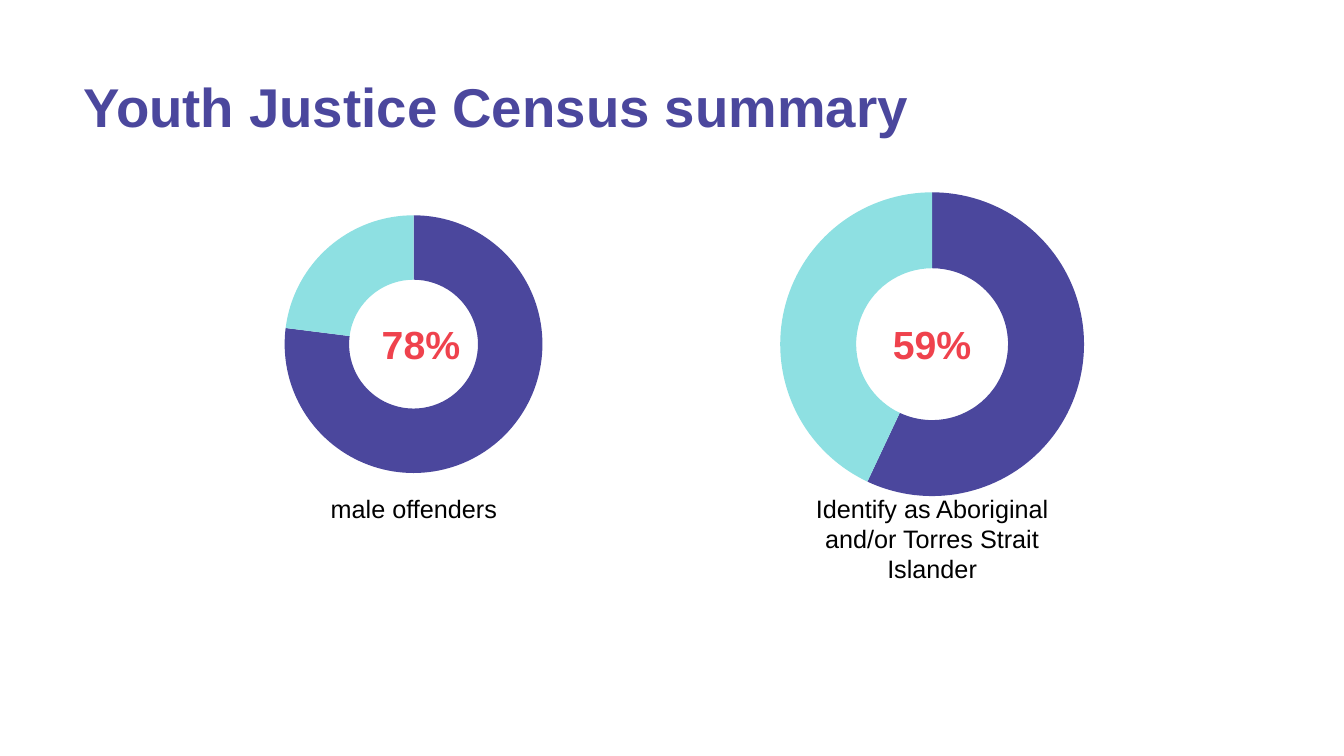
"""Build the Youth Justice Census summary slide with two doughnut charts."""
import pptx
import pptx.chart.data
import pptx.dml.color
import pptx.enum.chart
import pptx.enum.text
import pptx.oxml
import pptx.oxml.ns
import pptx.util
from pptx.util import Inches

PURPLE = pptx.dml.color.RGBColor(0x4B, 0x47, 0x9D)
AQUA = pptx.dml.color.RGBColor(0x8E, 0xE0, 0xE2)
RED = pptx.dml.color.RGBColor(0xEF, 0x42, 0x4D)
BLACK = pptx.dml.color.RGBColor(0, 0, 0)


def format_paragraph(paragraph, size, color, bold, alignment):
    """Set the alignment and the Arial font of a paragraph."""
    paragraph.alignment = alignment
    paragraph.font.name = "Arial"
    paragraph.font.size = pptx.util.Pt(size)
    paragraph.font.bold = bold
    paragraph.font.color.rgb = color


def set_title(slide, text):
    """Fill and place the title placeholder."""
    title = slide.shapes.title
    title.left, title.top = Inches(0.73), Inches(0.66)
    title.width, title.height = Inches(10.22), Inches(0.77)
    title.text_frame.text = text
    title.text_frame.auto_size = pptx.enum.text.MSO_AUTO_SIZE.NONE
    title.text_frame.vertical_anchor = pptx.enum.text.MSO_ANCHOR.MIDDLE
    format_paragraph(title.text_frame.paragraphs[0], 39, PURPLE, True,
                     pptx.enum.text.PP_ALIGN.LEFT)


def add_text(slide, text, left, top, width, height, size, color, bold=False):
    """Add a centred, wrapping text box."""
    box = slide.shapes.add_textbox(Inches(left), Inches(top), Inches(width), Inches(height))
    box.text_frame.word_wrap = True
    box.text_frame.text = text
    paragraph = box.text_frame.paragraphs[0]
    format_paragraph(paragraph, size, color, bold, pptx.enum.text.PP_ALIGN.CENTER)
    return paragraph


def set_plot_layout(chart, x, y, width, height):
    """Fix the inner plot area as fractions of the chart."""
    plot_area = chart.element.find(".//" + pptx.oxml.ns.qn("c:plotArea"))
    for layout in plot_area.findall(pptx.oxml.ns.qn("c:layout")):
        plot_area.remove(layout)
    settings = {"layoutTarget": "inner", "xMode": "edge", "yMode": "edge",
                "x": x, "y": y, "w": width, "h": height}
    children = "".join(f'<c:{name} val="{value}"/>' for name, value in settings.items())
    plot_area.insert(0, pptx.oxml.parse_xml(
        f'<c:layout {pptx.oxml.ns.nsdecls("c")}>'
        f"<c:manualLayout>{children}</c:manualLayout></c:layout>"))


def add_doughnut(slide, left, values):
    """Add a two-part doughnut chart without legend or labels."""
    data = pptx.chart.data.CategoryChartData()
    data.categories = ["1", "2"]
    data.add_series("Series 1", values)
    chart = slide.shapes.add_chart(
        pptx.enum.chart.XL_CHART_TYPE.DOUGHNUT, Inches(left), Inches(1.77),
        Inches(3.41), Inches(3.29), data).chart
    chart.has_title = False
    chart.has_legend = False
    chart.font.name = "Calibri"
    chart.font.size = pptx.util.Pt(10)
    chart.font.color.rgb = BLACK
    chart.plots[0].vary_by_categories = True
    for index, color in enumerate((PURPLE, AQUA)):
        point = chart.plots[0].series[0].points[index]
        point.format.fill.solid()
        point.format.fill.fore_color.rgb = color
        point.format.line.fill.background()
    return chart


def add_share(slide, chart_left, values, percent, percent_left, caption, caption_area):
    """Add a doughnut with its central percentage and its caption."""
    chart = add_doughnut(slide, chart_left, values)
    caption_left, caption_width, caption_height = caption_area
    paragraph = add_text(slide, caption, caption_left, 4.84, caption_width,
                         caption_height, 18, BLACK)
    paragraph.space_after = pptx.util.Pt(12)
    add_text(slide, percent, percent_left, 3.13, 1.07, 0.57, 28, RED, True)
    return chart


def main():
    """Create the slide and save the presentation."""
    presentation = pptx.Presentation()
    presentation.slide_width = Inches(13.33)
    presentation.slide_height = Inches(7.5)
    slide = presentation.slides.add_slide(presentation.slide_layouts[5])
    set_title(slide, "Youth Justice Census summary")
    male_chart = add_share(slide, 2.38, (77, 23), "78%", 3.64,
                           "male offenders", (2.54, 3.13, 0.4))
    set_plot_layout(male_chart, 0.13, 0.11, 0.75, 0.78)
    add_share(slide, 7.54, (57, 43), "59%", 8.71,
              "Identify as Aboriginal and/or Torres Strait Islander", (7.76, 2.97, 1.01))
    presentation.save("out.pptx")


if __name__ == "__main__":
    main()
